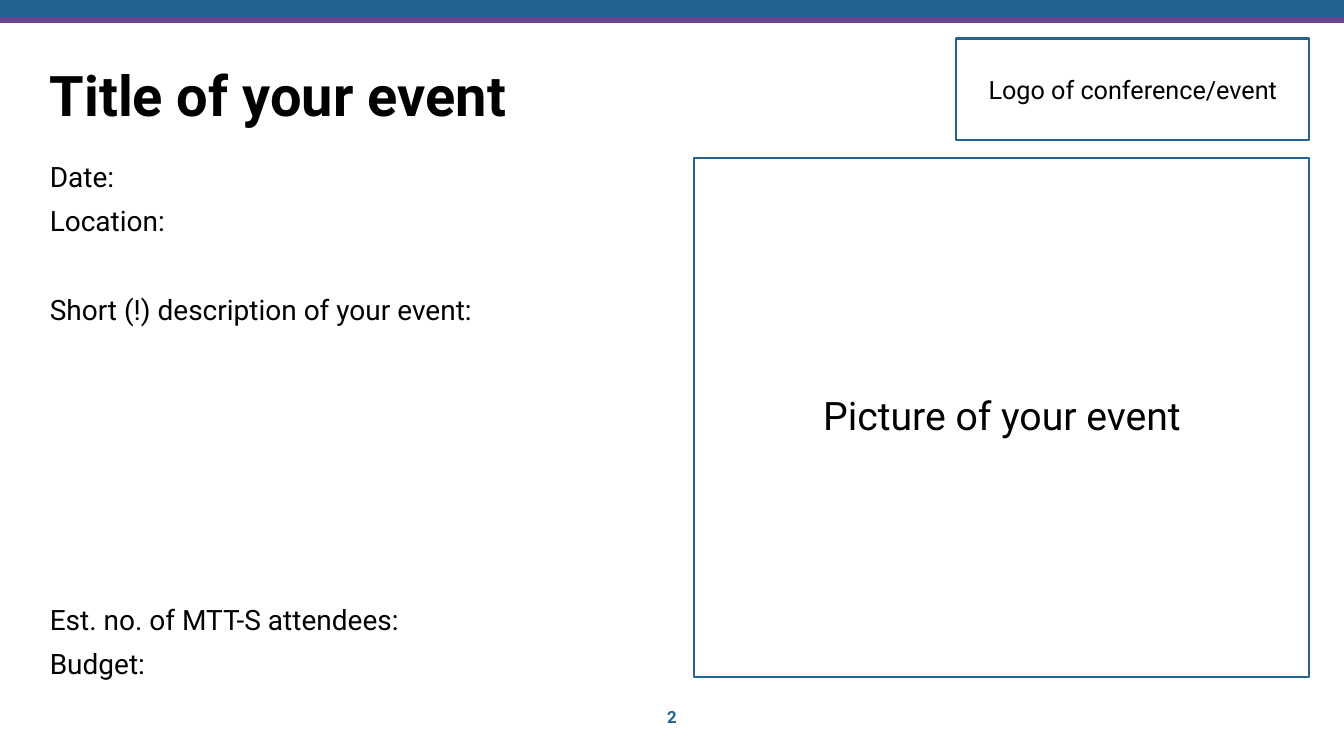
from dataclasses import dataclass

from pptx import Presentation
from pptx.dml.color import RGBColor
from pptx.enum.shapes import MSO_CONNECTOR, MSO_SHAPE
from pptx.enum.text import MSO_ANCHOR, MSO_AUTO_SIZE, PP_ALIGN
from pptx.oxml.ns import qn
from pptx.util import Cm, Pt
from lxml.etree import SubElement


@dataclass(frozen=True)
class Theme:
    font: str = "Roboto"
    blue: RGBColor = RGBColor(0x23, 0x63, 0x92)
    purple: RGBColor = RGBColor(0x67, 0x46, 0x8D)
    black: RGBColor = RGBColor(0, 0, 0)
    white: RGBColor = RGBColor(0xFF, 0xFF, 0xFF)
    title: int = 40
    large: int = 28
    body: int = 20
    label: int = 18
    small: int = 12


THEME = Theme()
WIDTH, HEIGHT = 33.87, 19.05
EDGE, RIGHT = 1, 33  # left and right margins of the content
TOP, TALL, HALF = 3.99, 13.08, 15.5  # the two columns
GAP, PITCH = 10, 31.6  # paragraph gap and line pitch in points

# Each entry and the number of free lines left above it
FIELDS = [
    ("Date:", 0),
    ("Location:", 0),
    ("Short (!) description of your event:", 1),
    ("Est. no. of MTT-S attendees:", 6),
    ("Budget:", 0),
]


def place(shape, left, top, width, height):
    shape.left, shape.top = Cm(left), Cm(top)
    shape.width, shape.height = Cm(width), Cm(height)


def setup(shape, anchor):
    frame = shape.text_frame
    frame.word_wrap = True
    frame.auto_size = MSO_AUTO_SIZE.NONE
    frame.vertical_anchor = anchor
    return frame


def plain(para):
    """Take the bullet and the indent off a list paragraph."""
    props = para._p.get_or_add_pPr()
    props.set("marL", "0")
    props.set("indent", "0")
    SubElement(props, qn("a:buNone"))


def write(para, text, size, align=PP_ALIGN.LEFT, color=THEME.black, bold=False):
    para.text = text
    para.alignment = align
    font = para.font
    font.name, font.size, font.bold = THEME.font, Pt(size), bold
    font.color.rgb = color


def outline(shape):
    shape.fill.solid()
    shape.fill.fore_color.rgb = THEME.white
    shape.line.color.rgb = THEME.blue
    shape.line.width = Pt(1.5)


def add_band(slide):
    bar = slide.shapes.add_shape(
        MSO_SHAPE.RECTANGLE, 0, 0, Cm(WIDTH), Cm(0.51))
    bar.shadow.inherit = False
    bar.fill.solid()
    bar.fill.fore_color.rgb = THEME.blue
    bar.line.fill.background()
    rule = slide.shapes.add_connector(
        MSO_CONNECTOR.STRAIGHT, 0, Cm(0.51), Cm(WIDTH), Cm(0.51))
    rule.line.color.rgb = THEME.purple
    rule.line.width = Pt(4.5)
    SubElement(rule._element.spPr, qn("a:effectLst"))


def add_title(slide, text):
    title = slide.shapes.title
    place(title, EDGE, 1.55, RIGHT - EDGE, 1.88)
    para = setup(title, MSO_ANCHOR.MIDDLE).paragraphs[0]
    write(para, text, THEME.title, bold=True)
    para.line_spacing = 0.9


def add_fields(body):
    place(body, EDGE, TOP, HALF, TALL)
    frame = setup(body, MSO_ANCHOR.TOP)
    for i, (text, free) in enumerate(FIELDS):
        para = frame.add_paragraph() if i else frame.paragraphs[0]
        plain(para)
        write(para, text, THEME.body)
        para.line_spacing = 0.9
        para.space_before = Pt(GAP + free * PITCH if i else 0)


def add_photo(body, text):
    place(body, RIGHT - HALF, TOP, HALF, TALL)
    outline(body)
    para = setup(body, MSO_ANCHOR.MIDDLE).paragraphs[0]
    plain(para)
    write(para, text, THEME.large, PP_ALIGN.CENTER)
    para.line_spacing = 0.9
    para.space_before = Pt(0)


def add_logo(slide, text):
    wide = 8.9
    box = slide.shapes.add_shape(
        MSO_SHAPE.RECTANGLE, Cm(RIGHT - wide), Cm(0.97), Cm(wide), Cm(2.57))
    box.shadow.inherit = False
    outline(box)
    para = setup(box, MSO_ANCHOR.MIDDLE).paragraphs[0]
    write(para, text, THEME.label, PP_ALIGN.CENTER)


def add_number(slide, text):
    wide = 1.75
    box = slide.shapes.add_textbox(
        Cm((WIDTH - wide) / 2), Cm(17.55), Cm(wide), Cm(1.02))
    para = setup(box, MSO_ANCHOR.MIDDLE).paragraphs[0]
    write(para, text, THEME.small, PP_ALIGN.CENTER, THEME.blue, True)


def main():
    deck = Presentation()
    deck.slide_width, deck.slide_height = Cm(WIDTH), Cm(HEIGHT)
    slide = deck.slides.add_slide(deck.slide_layouts[3])

    # Header
    add_band(slide)
    add_title(slide, "Title of your event")
    add_logo(slide, "Logo of conference/event")

    # Columns
    add_fields(slide.placeholders[1])
    add_photo(slide.placeholders[2], "Picture of your event")

    # Footer
    add_number(slide, "2")
    deck.save("out.pptx")


if __name__ == "__main__":
    main()
